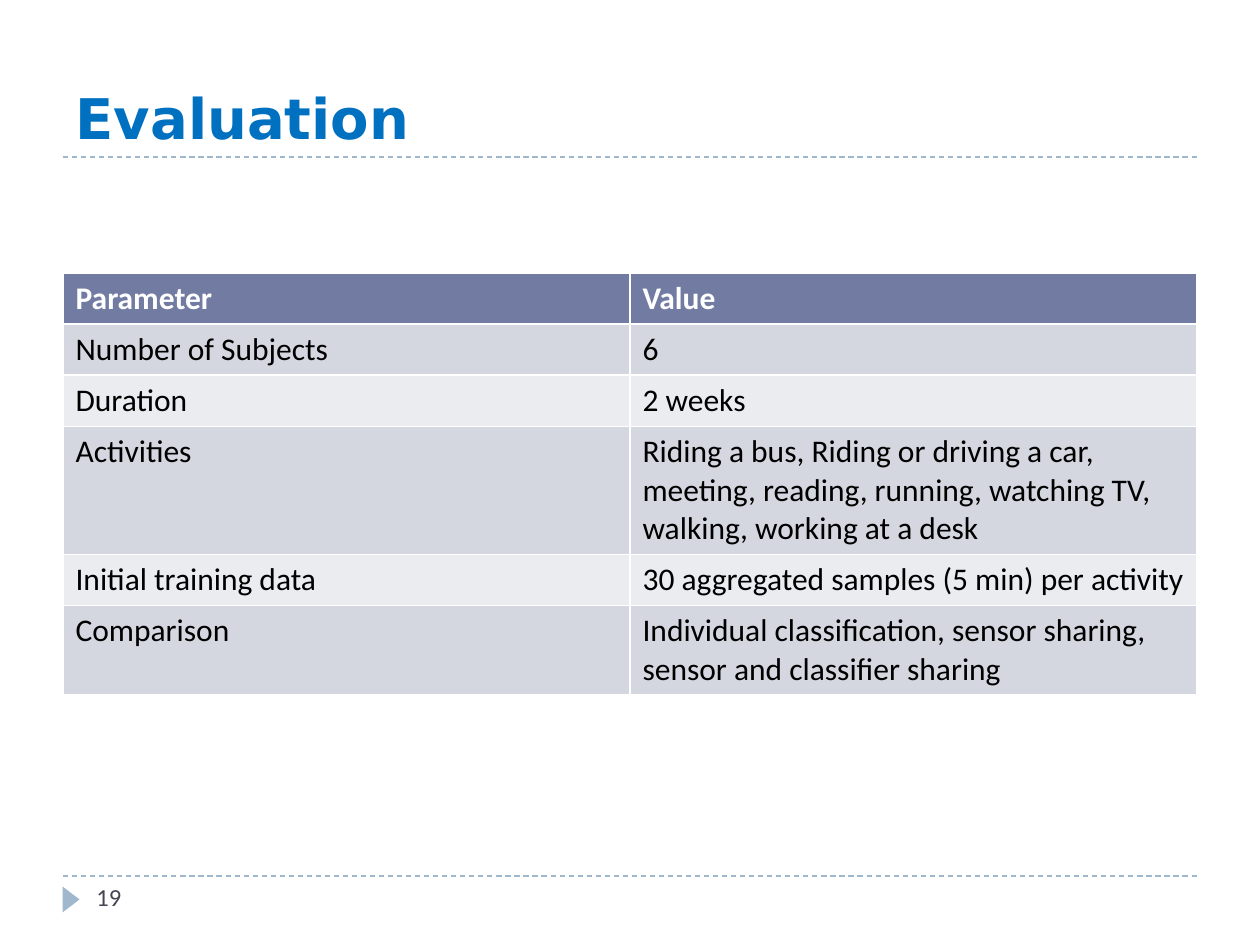
from pptx import Presentation
from pptx.dml.color import RGBColor as Rgb
from pptx.enum.dml import MSO_LINE as Dash
from pptx.enum.shapes import MSO_CONNECTOR as Conn, MSO_SHAPE as Kind
from pptx.enum.text import MSO_ANCHOR as Anchor, PP_ALIGN as Align
from pptx.oxml.ns import qn
from pptx.util import Pt
from lxml.etree import SubElement

SCALE = 914400 / 126
COLORS = {
    "title": "0070C0", "rule": "9FB8CD", "number": "464653",
    "head": "727CA3", "odd": "D5D7E0", "even": "EBECF0",
    "white": "FFFFFF", "black": "000000",
}
ROWS = [
    ("Parameter", "Value"),
    ("Number of Subjects", "6"),
    ("Duration", "2 weeks"),
    ("Activities", "Riding a bus, Riding or driving a car, meeting, reading, "
                   "running, watching TV, walking, working at a desk"),
    ("Initial training data", "30 aggregated samples (5 min) per activity"),
    ("Comparison", "Individual classification, sensor sharing, "
                   "sensor and classifier sharing"),
]


def px(*sizes):
    return [round(size * SCALE) for size in sizes]


def color(name):
    return Rgb.from_string(COLORS[name])


def style(para, face, size, tint, bold=False):
    font = para.font
    font.name, font.size, font.bold = face, Pt(size), bold
    font.color.rgb = color(tint)


def add_rule(slide, left, top, width):
    line = slide.shapes.add_connector(
        Conn.STRAIGHT, *px(left, top, left + width, top))
    line.line.color.rgb = color("rule")
    line.line.width = Pt(0.75)
    line.line.dash_style = Dash.DASH
    SubElement(line._element.spPr, qn("a:effectLst"))


def add_title(slide, left, top, width, height):
    add_rule(slide, left, top + height, width)
    title = slide.shapes.title
    title.left, title.top, title.width, title.height = px(
        left, top, width, height)
    frame = title.text_frame
    frame.text = "Evaluation"
    frame.vertical_anchor = Anchor.BOTTOM
    para = frame.paragraphs[0]
    para.alignment = Align.LEFT
    style(para, "DejaVu Sans", 32, "title", True)


def add_grid(slide, left, top, width, row):
    table = slide.shapes.add_table(
        len(ROWS), 2, *px(left, top, width, row * len(ROWS))).table
    for y, texts in enumerate(ROWS):
        fill = "head" if y == 0 else "odd" if y % 2 else "even"
        for x, text in enumerate(texts):
            cell = table.cell(y, x)
            cell.text = text
            cell.fill.solid()
            cell.fill.fore_color.rgb = color(fill)
            style(cell.text_frame.paragraphs[0], "Calibri", 18,
                  "black" if y else "white", y == 0)


def add_footer(slide, left, top, width):
    add_rule(slide, left, top, width)
    mark = slide.shapes.add_shape(
        Kind.ISOSCELES_TRIANGLE, *px(left - 5, top + 15, 26, 17))
    mark.rotation = 90
    mark.shadow.inherit = False
    mark.fill.solid()
    mark.fill.fore_color.rgb = color("rule")
    mark.line.fill.background()
    box = slide.shapes.add_textbox(*px(left + 21, top, 273, 50))
    frame = box.text_frame
    frame.word_wrap = True
    frame.text = "19"
    style(frame.paragraphs[0], "Calibri", 14, "number")


def main():
    deck = Presentation()
    deck.slide_width, deck.slide_height = px(1260, 945)
    slide = deck.slides.add_slide(deck.slide_layouts[5])
    add_title(slide, 63, 21, 1134, 136)
    add_grid(slide, 63, 273, 1134, 51)
    add_footer(slide, 63, 876, 1134)
    deck.save("out.pptx")


if __name__ == "__main__":
    main()
